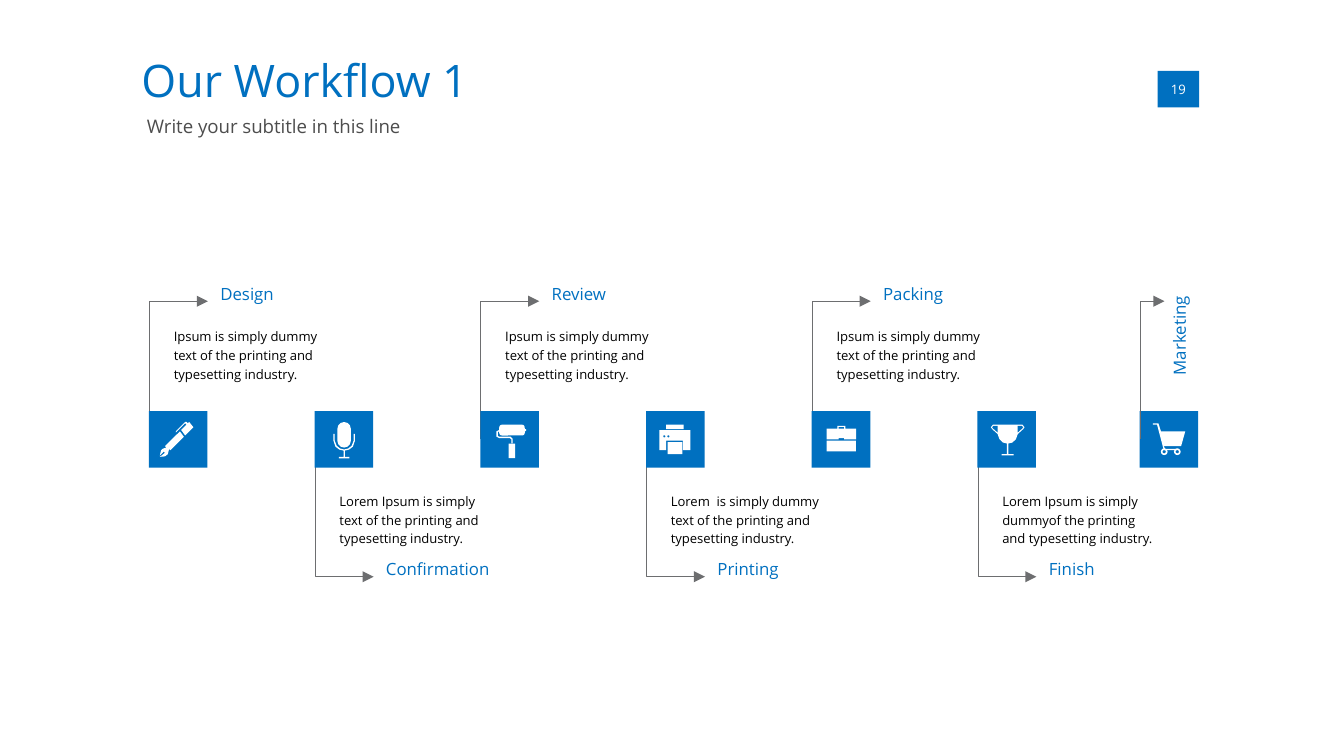
from pptx import Presentation
from pptx.dml.color import RGBColor
from pptx.enum import shapes, text
from pptx.oxml.ns import qn
from pptx.util import Pt
from lxml import etree

BLUE, WHITE, GREY = "0070C0", "FFFFFF", "6D6E70"
RECT, ROUND = shapes.MSO_SHAPE.RECTANGLE, shapes.MSO_SHAPE.ROUNDED_RECTANGLE
OVAL, RING = shapes.MSO_SHAPE.OVAL, shapes.MSO_SHAPE.DONUT
ALIGN = text.PP_ALIGN
MID, RISE = 235.2, 73.8      # centre line of the tiles, height of an arrow
WIDE, HIGH = 31.4, 30.2      # size of a tile


def write(box, words, size, color, align=ALIGN.LEFT, space=None):
    frame = box.text_frame
    frame.text = words
    frame.word_wrap = True
    frame.auto_size = text.MSO_AUTO_SIZE.NONE
    frame.vertical_anchor = text.MSO_ANCHOR.TOP
    frame.margin_left = frame.margin_right = 0
    frame.margin_top = frame.margin_bottom = 0
    para = frame.paragraphs[0]
    para.alignment, para.line_spacing, para.space_before = align, space, Pt(0)
    para.font.size, para.font.name = Pt(size), "Open Sans"
    para.font.color.rgb = RGBColor.from_string(color)


def draw(home, part, x, y, color=None):
    """Draw a preset (kind, left, top, width, height) or a list of points.

    Without a colour the points make an open arrow.
    """
    if isinstance(part, list):
        pts = [(Pt(x + a), Pt(y + b)) for a, b in part]
        pen = home.build_freeform(*pts[0], scale=1.0)
        pen.add_line_segments(pts[1:], close=color is not None)
        shape = pen.convert_to_shape()
    else:
        kind, left, top, wide, high = part
        shape = home.add_shape(kind, Pt(x + left), Pt(y + top), Pt(wide), Pt(high))
        if kind == ROUND:
            shape.adjustments[0] = 0.5 if high > wide else 0.25
    shape.shadow.inherit = False
    if color:
        shape.fill.solid()
        shape.fill.fore_color.rgb = RGBColor.from_string(color)
        shape.line.fill.background()
    else:
        shape.fill.background()
        shape.line.width = Pt(0.25)
        shape.line.color.rgb = RGBColor.from_string(GREY)
        line = shape.line._get_or_add_ln()
        etree.SubElement(line, qn("a:tailEnd"), type="triangle")
    return shape


# Icon parts in points from the tile's corner
pen = [
    (WHITE, [(14.4, 11.5), (19.4, 6.5), (20.2, 7.2), (17.3, 10.1), (19.4, 13), (23.8, 8.6),
             (21.6, 5.8), (20.9, 6.5), (20.2, 5.8), (19.4, 5.8), (14.4, 10.8)]),
    (WHITE, [(18.7, 13.7), (16.6, 10.8), (8.6, 18.7), (9.4, 19.4), (7.2, 20.2), (6.5, 20.9),
             (5.8, 23.8), (7.9, 21.6), (8.6, 22.3), (5.8, 24.5), (8.6, 24.2), (10.1, 23),
             (10.8, 20.2), (11.5, 20.9)]),
]
mic = [
    (WHITE, (ROUND, 12.2, 5.8, 7.2, 13.7)),
    (WHITE, [(10.1, 12.2), (10.1, 15.8), (11.2, 19), (13.3, 20.6), (15.5, 21.1), (15.5, 24.5),
             (13, 24.5), (13, 25.2), (18.7, 25.2), (18.7, 24.5), (16.2, 24.5), (16.2, 21.1),
             (18.4, 20.6), (20.5, 19), (21.6, 15.8), (21.6, 12.2), (20.9, 12.2), (20.9, 15.8),
             (19.8, 18.6), (18, 20), (15.8, 20.5), (13.7, 20), (11.9, 18.6), (10.8, 15.8),
             (10.8, 12.2)]),
]
roller = [
    (WHITE, (ROUND, 10.1, 7.2, 13.7, 5.8)),
    (WHITE, (RECT, 23.4, 9.6, 1.1, 1.1)),
    (WHITE, (RECT, 15.1, 17.3, 3.6, 7.9)),
    (WHITE, [(10.1, 10.1), (8.6, 10.8), (8.6, 13.7), (10.1, 14.4), (15.8, 14.4), (16.6, 15.1),
             (16.6, 17.3), (17.3, 17.3), (17.3, 14.8), (16.2, 13.7), (10.1, 13.7), (9.4, 13.3),
             (9.4, 11.2), (10.1, 10.8)]),
]
printer = [
    (WHITE, (RECT, 10.8, 7.2, 9.4, 2.5)),
    (WHITE, [(7.2, 10.1), (23.8, 10.1), (23.8, 20.9), (19.8, 20.9), (19.8, 15.8), (10.8, 15.8),
             (10.8, 20.9), (7.2, 20.9)]),
    (WHITE, (RECT, 11.5, 16.6, 7.9, 6.5)),
    (BLUE, (OVAL, 9.2, 12.9, 1.1, 1.1)),
    (BLUE, (OVAL, 11.4, 12.9, 1.1, 1.1)),
]
case = [
    (WHITE, (RECT, 7.9, 15.8, 15.8, 5.8)),
    (WHITE, [(7.9, 9.4), (13.7, 9.4), (13.7, 7.9), (18, 7.9), (18, 9.4), (23.8, 9.4),
             (23.8, 15.1), (17.3, 15.1), (17.3, 14.4), (14.4, 14.4), (14.4, 15.1), (7.9, 15.1)]),
    (BLUE, (RECT, 14.4, 8.6, 2.9, 0.8)),
]
cup = [
    (WHITE, [(8.3, 7.2), (24.1, 7.2), (25.2, 8.6), (24.5, 9.6), (21.6, 12.2), (20.6, 15),
             (18.7, 16.8), (16.6, 17.3), (16.6, 23), (19.4, 23), (19.4, 23.6), (13, 23.6),
             (13, 23), (15.8, 23), (15.8, 17.3), (13.7, 16.8), (11.8, 15), (10.8, 12.2),
             (7.9, 9.6), (7.2, 8.6)]),
    (BLUE, [(10.8, 7.9), (8.6, 7.9), (7.9, 8.6), (8.3, 9.2), (10.8, 11.4)]),
    (BLUE, [(21.6, 7.9), (23.8, 7.9), (24.5, 8.6), (24.1, 9.2), (21.6, 11.4)]),
]
cart = [
    (WHITE, [(7.2, 6.5), (10.1, 6.5), (11.5, 10.8), (24.5, 10.8), (22.3, 18.7), (13, 18.7),
             (13.7, 20.2), (20.2, 20.2), (20.2, 20.9), (13, 20.9), (9.4, 7.2), (7.2, 7.2)]),
    (WHITE, (RING, 11.4, 19.9, 3.6, 3.6)),
    (WHITE, (RING, 18.4, 19.9, 3.6, 3.6)),
]

deck = Presentation()
deck.slide_width, deck.slide_height = Pt(720), Pt(405)
slide = deck.slides.add_slide(deck.slide_layouts[0])
page = slide.shapes

# Title and subtitle
heads = [
    ("Our Workflow 1", 24, BLUE, (75.8, 28, 342.7, 35.3)),
    ("Write your subtitle in this line", 10, "4D4D4D", (78.7, 61.5, 497.5, 16.6)),
]
for box, (words, size, color, place) in zip(slide.placeholders, heads):
    box.left, box.top, box.width, box.height = map(Pt, place)
    write(box, words, size, color)

# Page number
draw(page, (RECT, 0, 0, 22.2, 19.5), 620.2, 38, BLUE)
number = page.add_textbox(Pt(627.2), Pt(43.2), Pt(8.2), Pt(9))
write(number, "19", 7, WHITE, ALIGN.CENTER)
number.text_frame.vertical_anchor = text.MSO_ANCHOR.MIDDLE
number.text_frame.word_wrap = False

# Steps: arrows go up and down in turn
steps = [
    ("Design", "Ipsum is simply dummy text of the printing and typesetting industry.", pen),
    ("Confirmation", "Lorem Ipsum is simply text of the printing and typesetting industry.", mic),
    ("Review", "Ipsum is simply dummy text of the printing and typesetting industry.", roller),
    ("Printing", "Lorem  is simply dummy text of the printing and typesetting industry.", printer),
    ("Packing", "Ipsum is simply dummy text of the printing and typesetting industry.", case),
    ("Finish", "Lorem Ipsum is simply dummyof the printing and typesetting industry.", cup),
    ("Marketing", None, cart),
]
for i, (name, words, icon) in enumerate(steps):
    x = 79.8 + 88.77 * i if words else 610.5
    up = i % 2 == 0
    rise = -RISE if up else RISE
    if words:
        draw(page, [(0, 0), (0, rise), (WIDE, rise)], x + 0.2, MID)
        label = page.add_textbox(Pt(x + 38.2), Pt(152 if up else 299.5), Pt(72.7), Pt(21.6))
        write(label, name, 9, BLUE)
        note = page.add_textbox(Pt(x + 13.3), Pt(174.5 if up else 262.6), Pt(82.8), Pt(36))
        write(note, words, 7, "000000", space=1.2)

    # Tile with its icon
    group = page.add_group_shape().shapes
    top = MID + 0.2 - HIGH / 2
    draw(group, (RECT, 0, 0, WIDE, HIGH), x, top, BLUE)
    for color, part in icon:
        draw(group, part, x, top, color)

    # The last step has a short arrow and an upright label
    if not words:
        draw(page, [(0, 0), (0, rise), (13, rise)], x + 0.3, MID)
        label = page.add_textbox(Pt(603.9), Pt(181), Pt(60.5), Pt(15.8))
        label.rotation = 270
        write(label, name, 9, BLUE, ALIGN.RIGHT)

deck.save("out.pptx")
